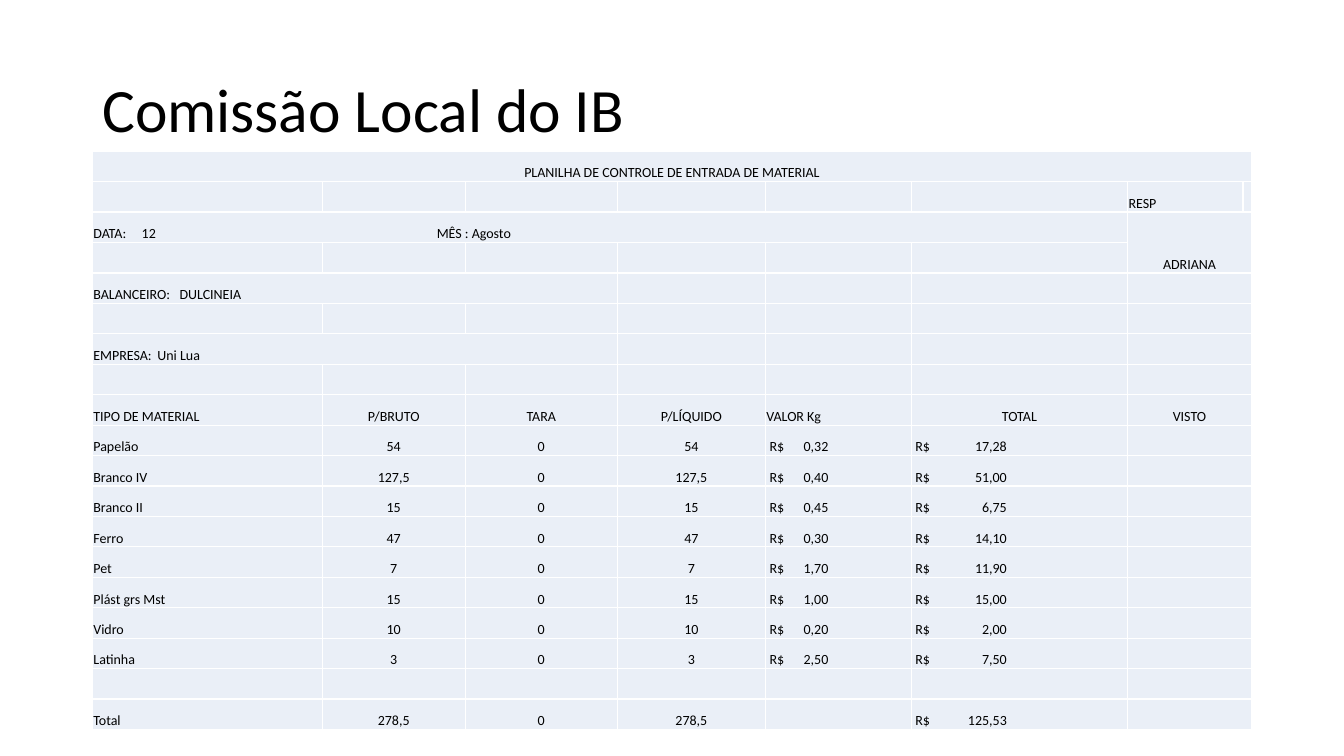
from lxml import etree
from pptx import Presentation
from pptx import util as u
from pptx.dml.color import RGBColor
from pptx.enum import text
from pptx.oxml import ns

COLORS = {"ink": "000000", "cell": "EAEFF7", "rule": "FFFFFF"}
LEFT, CENTER = text.PP_ALIGN.LEFT, text.PP_ALIGN.CENTER


class Deck:
    px = 9525
    font = "Calibri"

    def __init__(self, width, height):
        self.prs = Presentation()
        self.prs.slide_width = self.length(width)
        self.prs.slide_height = self.length(height)
        self.slide = self.prs.slides.add_slide(self.prs.slide_layouts[6])

    def length(self, pixels):
        return u.Emu(pixels * self.px)

    def box(self, *pixels):
        return [self.length(value) for value in pixels]

    def set_words(self, paragraph, words, size, align=LEFT):
        paragraph.text = words
        paragraph.alignment = align
        for run in paragraph.runs:
            run.font.name = self.font
            run.font.size = u.Pt(size)
            run.font.bold = False
            run.font.color.rgb = RGBColor.from_string(COLORS["ink"])

    def title(self, words, *place):
        frame = self.slide.shapes.add_textbox(*self.box(*place)).text_frame
        frame.word_wrap = True
        frame.vertical_anchor = text.MSO_ANCHOR.MIDDLE
        self.set_words(frame.paragraphs[0], words, 44)
        frame.paragraphs[0].line_spacing = 0.9

    def table(self, left, top, widths, row_height, row_count):
        place = self.box(left, top, sum(widths), row_height * row_count)
        grid = self.slide.shapes.add_table(row_count, len(widths), *place).table
        grid.first_row = grid.horz_banding = False
        for column, width in zip(grid.columns, widths):
            column.width = self.length(width)
        for row in grid.rows:
            row.height = self.length(row_height)
        for cell in grid.iter_cells():
            self.style_cell(cell)
        return grid

    def style_cell(self, cell):
        cell.margin_left = cell.margin_right = cell.margin_top = self.length(1)
        cell.margin_bottom = 0
        cell.vertical_anchor = text.MSO_ANCHOR.BOTTOM
        cell.fill.solid()
        cell.fill.fore_color.rgb = RGBColor.from_string(COLORS["cell"])
        properties = cell._tc.get_or_add_tcPr()
        for position, side in enumerate(("lnL", "lnR", "lnT", "lnB")):
            line = etree.Element(ns.qn(f"a:{side}"), w="12700")
            fill = etree.SubElement(line, ns.qn("a:solidFill"))
            etree.SubElement(fill, ns.qn("a:srgbClr"), val=COLORS["rule"])
            properties.insert(position, line)
        etree.SubElement(cell.text_frame.paragraphs[0]._p, ns.qn("a:endParaRPr"), sz="1000")

    def fill_cell(self, cell, words, align=LEFT, tabs=(), indent=1):
        paragraph = cell.text_frame.paragraphs[0]
        self.set_words(paragraph, words, 10, align)
        cell.margin_left = self.length(indent)
        if tabs:
            stops = etree.SubElement(paragraph._p.get_or_add_pPr(), ns.qn("a:tabLst"))
            for position, side in tabs:
                etree.SubElement(stops, ns.qn("a:tab"), pos=str(self.length(position)), algn=side)


WIDTHS = [219, 136, 145, 141, 139, 206, 110, 8]
HEADINGS = ["TIPO DE MATERIAL", "P/BRUTO", "TARA", "P/LÍQUIDO", "VALOR Kg", "TOTAL", "VISTO"]
MATERIALS = [
    ("Papelão", "54", "0,32", "17,28"),
    ("Branco IV", "127,5", "0,40", "51,00"),
    ("Branco II", "15", "0,45", "6,75"),
    ("Ferro", "47", "0,30", "14,10"),
    ("Pet", "7", "1,70", "11,90"),
    ("Plást grs Mst", "15", "1,00", "15,00"),
    ("Vidro", "10", "0,20", "2,00"),
    ("Latinha", "3", "2,50", "7,50"),
    None,
    ("Total", "278,5", "", "125,53"),
]
HEADING_ROW = 8
ROW_COUNT = HEADING_ROW + 1 + len(MATERIALS)


def main():
    deck = Deck(1280, 720)
    deck.title("Comissão Local do IB", 88, 38, 1104, 139)
    sheet = deck.table(88, 144, WIDTHS, 29, ROW_COUNT)

    spans = [(0, 0, 0, 7), (2, 0, 2, 5), (2, 6, 3, 7), (4, 0, 4, 2), (6, 0, 6, 2)]
    spans += [(row, 6, row, 7) for row in range(4, ROW_COUNT)]
    for top, left, bottom, right in spans:
        sheet.cell(top, left).merge(sheet.cell(bottom, right))

    deck.fill_cell(sheet.cell(0, 0), "PLANILHA DE CONTROLE DE ENTRADA DE MATERIAL", CENTER)
    deck.fill_cell(sheet.cell(1, 6), "RESP")
    deck.fill_cell(sheet.cell(2, 0), "DATA:\t12\tMÊS : Agosto", tabs=[(46, "l"), (327, "l")])
    deck.fill_cell(sheet.cell(2, 6), "ADRIANA", CENTER)
    deck.fill_cell(sheet.cell(4, 0), "BALANCEIRO:\tDULCINEIA", tabs=[(82, "l")])
    deck.fill_cell(sheet.cell(6, 0), "EMPRESA:\tUni Lua", tabs=[(61, "l")])

    for column, heading in enumerate(HEADINGS):
        align = LEFT if column in (0, 4) else CENTER
        deck.fill_cell(sheet.cell(HEADING_ROW, column), heading, align)

    for row, material in enumerate(MATERIALS, HEADING_ROW + 1):
        if not material:
            continue
        name, weight, price, total = material
        deck.fill_cell(sheet.cell(row, 0), name)
        for column, amount in enumerate((weight, "0", weight), 1):
            deck.fill_cell(sheet.cell(row, column), amount, CENTER)
        for column, money, stop in ((4, price, 56), (5, total, 87)):
            if money:
                deck.fill_cell(sheet.cell(row, column), f"R$\t{money}", tabs=[(stop, "r")], indent=4)

    deck.prs.save("out.pptx")


if __name__ == "__main__":
    main()
